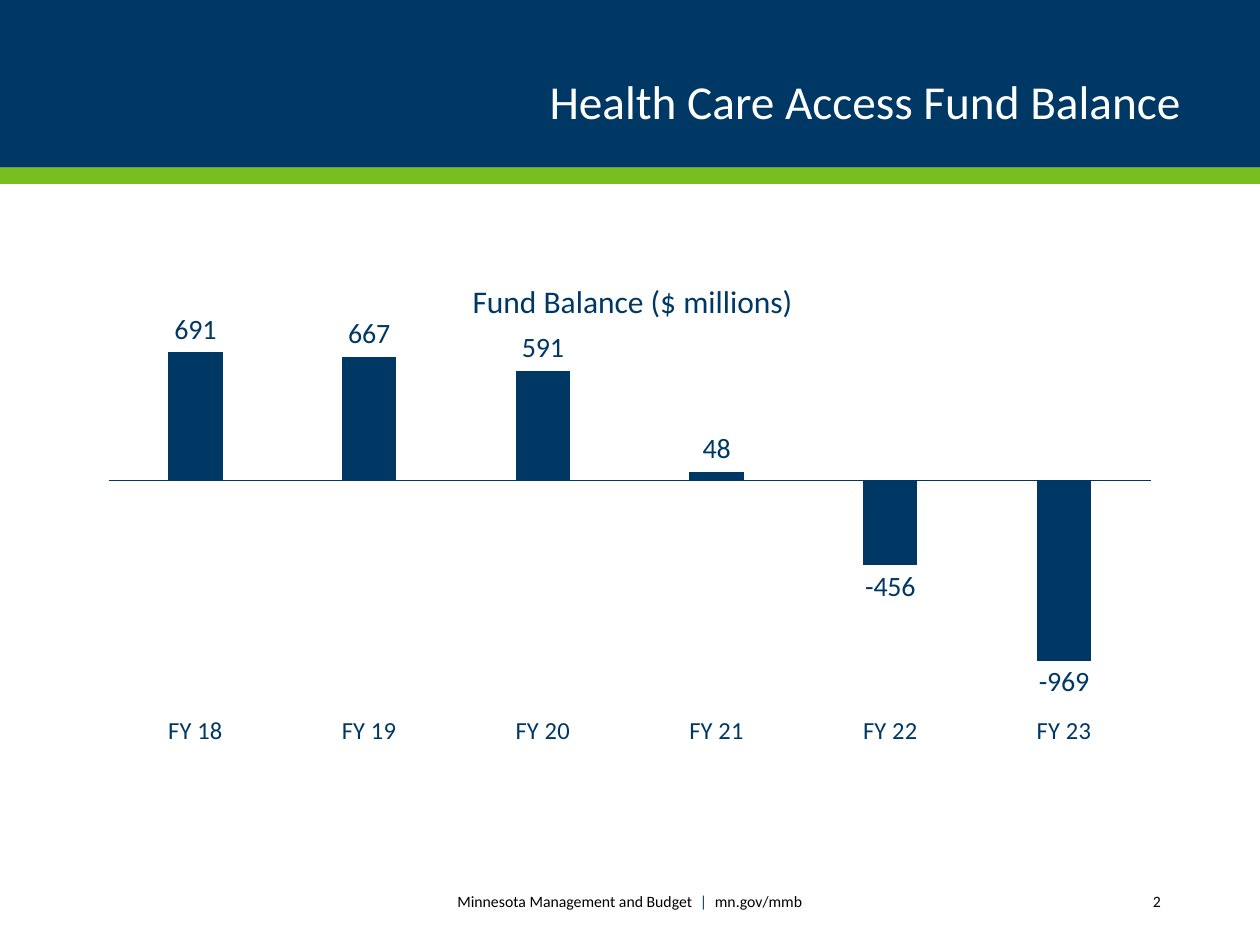
"""Build the Health Care Access Fund balance slide."""
from lxml import etree
from pptx import Presentation, util as u
from pptx.chart import data
from pptx.dml.color import RGBColor
from pptx.enum import chart as ch, shapes, text
from pptx.oxml.ns import qn

FONT = "Calibri"
HUES = {"navy": "003865", "green": "78BE21", "white": "FFFFFF", "black": "000000"}
WIDE, HIGH = 25.4, 19.05
BANDS = [("navy", 0, 3.38), ("green", 3.38, 0.33)]
FUNDS = {"FY 18": 691, "FY 19": 667, "FY 20": 591,
         "FY 21": 48, "FY 22": -456, "FY 23": -969}
RIGHT, MID = text.PP_ALIGN.RIGHT, text.PP_ALIGN.CENTER
TEXTS = [
    ((6.88, 17.65, 11.63, 1.02), MID, 9, 1,
     [("Minnesota Management and Budget\u2002", "black"), ("|", "navy"),
      ("\u2002mn.gov/mmb", "black")]),
    ((20.6, 17.65, 3.05, 1.02), RIGHT, 9, 1, [("2", "black")]),
    ((2.16, 0.84, 21.89, 2.54), RIGHT, 27, 0.9,
     [("Health Care Access Fund Balance", "white")]),
]
PLOT = {"layoutTarget": "inner", "xMode": "edge", "yMode": "edge",
        "x": 0.02, "y": 0.165, "w": 0.96, "h": 0.73}
HEAD = {"xMode": "edge", "yMode": "edge", "x": 0.35, "y": 0.05}


def hue(name):
    return RGBColor.from_string(HUES[name])


def box(at):
    return [u.Cm(n) for n in at]


def style(font, size, name="navy"):
    font.name, font.size, font.bold = FONT, u.Pt(size), False
    font.color.rgb = hue(name)


def paint(fill, name):
    fill.solid()
    fill.fore_color.rgb = hue(name)


def add_band(slide, name, top, tall):
    band = slide.shapes.add_shape(shapes.MSO_SHAPE.RECTANGLE, *box((0, top, WIDE, tall)))
    band.shadow.inherit = False
    paint(band.fill, name)
    band.line.fill.background()


def add_text(slide, at, align, size, gap, runs):
    frame = slide.shapes.add_textbox(*box(at)).text_frame
    frame.word_wrap = True
    frame.vertical_anchor = text.MSO_ANCHOR.MIDDLE
    para = frame.paragraphs[0]
    para.alignment, para.line_spacing = align, gap
    para.font.name, para.font.size = FONT, u.Pt(size)
    for words, name in runs:
        run = para.add_run()
        run.text = words
        run.font.color.rgb = hue(name)


def place(owner, index, spots):
    for old in owner.findall(qn("c:layout")):
        owner.remove(old)
    layout = etree.Element(qn("c:layout"))
    manual = etree.SubElement(layout, qn("c:manualLayout"))
    for tag, val in spots.items():
        etree.SubElement(manual, qn("c:" + tag)).set("val", str(val))
    owner.insert(index, layout)


def add_graph(slide):
    src = data.CategoryChartData()
    src.categories = list(FUNDS)
    src.add_series("Series 1", list(FUNDS.values()))
    graph = slide.shapes.add_chart(ch.XL_CHART_TYPE.COLUMN_CLUSTERED,
                                   *box((1.75, 5, 21.89, 10.26)), src).chart
    style(graph.font, 10)
    graph.has_legend = False
    graph.has_title = True
    title = graph.chart_title
    title.include_in_layout = False
    title.text_frame.text = "Fund Balance ($ millions)"
    style(title.text_frame.paragraphs[0].font, 18)

    cat, val = graph.category_axis, graph.value_axis
    cat.tick_label_position = ch.XL_TICK_LABEL_POSITION.LOW
    cat.major_tick_mark = ch.XL_TICK_MARK.NONE
    style(cat.tick_labels.font, 14)
    cat.format.line.color.rgb = hue("navy")
    cat.format.line.width = u.Pt(0.75)
    val.minimum_scale, val.maximum_scale = -1200, 800
    val.has_major_gridlines = val.visible = False

    plot = graph.plots[0]
    plot.gap_width, plot.overlap = 219, -27
    plot.vary_by_categories = False
    bars = plot.series[0]
    bars.invert_if_negative = False
    paint(bars.format.fill, "navy")
    tags = bars.data_labels
    tags.show_value = True
    tags.position = ch.XL_LABEL_POSITION.OUTSIDE_END
    tags.number_format, tags.number_format_is_linked = "#,##0", False
    style(tags.font, 16)

    root = graph.element
    place(root.find(".//" + qn("c:plotArea")), 0, PLOT)
    place(root.find(".//" + qn("c:title")), 1, HEAD)


def main():
    deck = Presentation()
    deck.slide_width, deck.slide_height = u.Cm(WIDE), u.Cm(HIGH)
    slide = deck.slides.add_slide(deck.slide_layouts[6])
    for band in BANDS:
        add_band(slide, *band)
    add_graph(slide)
    for item in TEXTS:
        add_text(slide, *item)
    deck.save("out.pptx")


if __name__ == "__main__":
    main()
